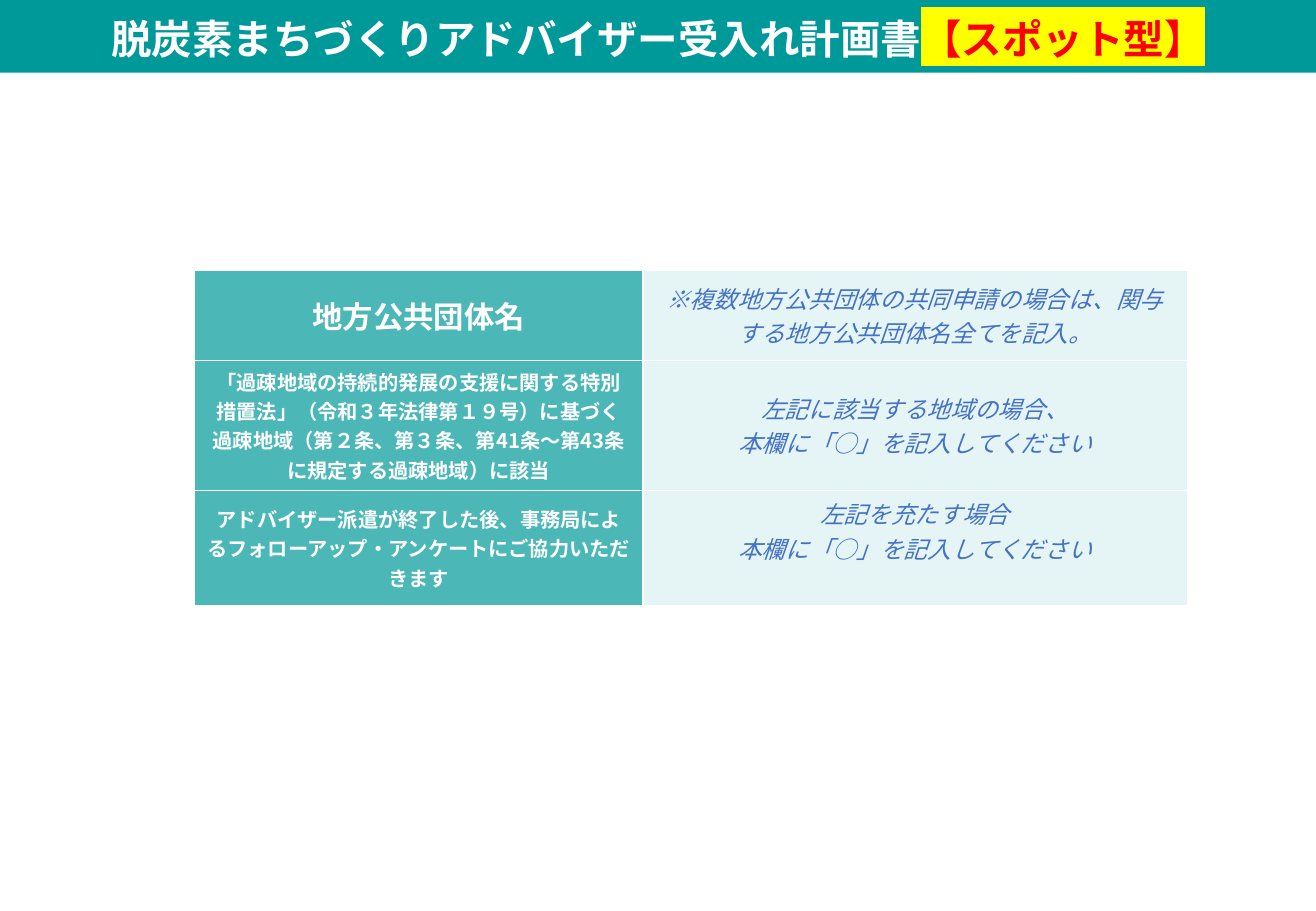
import pptx
import pptx.util
import pptx.dml.color
import pptx.enum.lang
import pptx.enum.shapes
import pptx.enum.text
import pptx.oxml
import pptx.oxml.ns
from lxml import etree

Cm = pptx.util.Cm
Pt = pptx.util.Pt
RGBColor = pptx.dml.color.RGBColor
qn = pptx.oxml.ns.qn

TEAL = RGBColor(0x00, 0x99, 0x99)
WHITE = RGBColor(0xFF, 0xFF, 0xFF)
RED = RGBColor(0xFF, 0x00, 0x00)
YELLOW = RGBColor(0xFF, 0xFF, 0x00)
BLUE = RGBColor(0x44, 0x72, 0xC4)
GOTHIC = "Noto Sans CJK JP"
LATIN = "Arial"

TITLE = [
    ("脱炭素まちづくりアドバイザー受入れ計画書", WHITE, None),
    ("【スポット型】", RED, YELLOW),
]
# heading, heading size (pt), entry lines, row height (cm), space below entry (cm)
ROWS = [
    ("地方公共団体名", 18,
     ["※複数地方公共団体の共同申請の場合は、関与する地方公共団体名全てを記入。"],
     1.89, 0.13),
    ("「過疎地域の持続的発展の支援に関する特別措置法」（令和３年法律第１９号）に基づく"
     "過疎地域（第２条、第３条、第41条～第43条に規定する過疎地域）に該当", 12,
     ["左記に該当する地域の場合、", "本欄に「○」を記入してください"],
     2.7, 0.13),
    ("アドバイザー派遣が終了した後、事務局によるフォローアップ・アンケートに"
     "ご協力いただきます", 12,
     ["左記を充たす場合", "本欄に「○」を記入してください"],
     2.4, 0.85),
]
COLUMN_WIDTHS = (9.37, 11.38)
SLIDE_WIDTH, SLIDE_HEIGHT = Cm(27.51), Cm(19.05)


def style_run(run, size, color, face=GOTHIC, bold=True, italic=False):
    font = run.font
    font.size, font.bold, font.italic = Pt(size), bold, italic
    font.color.rgb = color
    font.name = face
    font.language_id = pptx.enum.lang.MSO_LANGUAGE_ID.JAPANESE
    latin = run._r.rPr.find(qn("a:latin"))
    east_asian = etree.Element(qn("a:ea"), typeface=GOTHIC)
    latin.addnext(east_asian)


def highlight(run, color):
    mark = etree.Element(qn("a:highlight"))
    etree.SubElement(mark, qn("a:srgbClr"), val=str(color))
    run._r.rPr.find(qn("a:solidFill")).addnext(mark)


def tint_cell(cell, opacity):
    """Fill a cell with translucent teal and give it thin white borders."""
    cell.fill.solid()
    cell.fill.fore_color.rgb = TEAL
    properties = cell._tc.tcPr
    fill_color = properties.find(qn("a:solidFill")).find(qn("a:srgbClr"))
    etree.SubElement(fill_color, qn("a:alpha"), val=str(opacity * 1000))
    for position, side in enumerate(("lnL", "lnR", "lnT", "lnB")):
        border = etree.Element(qn("a:" + side), w=str(Pt(1)))
        line_fill = etree.SubElement(border, qn("a:solidFill"))
        etree.SubElement(line_fill, qn("a:srgbClr"), val=str(WHITE))
        properties.insert(position, border)


def fill_cell(cell, lines, opacity, **run_style):
    cell.vertical_anchor = pptx.enum.text.MSO_ANCHOR.MIDDLE
    cell.text_frame.text = "\n".join(lines)
    for paragraph in cell.text_frame.paragraphs:
        paragraph.alignment = pptx.enum.text.PP_ALIGN.CENTER
        for run in paragraph.runs:
            style_run(run, **run_style)
    tint_cell(cell, opacity)


def add_title(slide):
    banner = slide.shapes.add_shape(
        pptx.enum.shapes.MSO_SHAPE.RECTANGLE, 0, 0, SLIDE_WIDTH, Cm(1.52))
    banner.shadow.inherit = False
    banner.fill.solid()
    banner.fill.fore_color.rgb = TEAL
    banner.line.fill.background()
    frame = banner.text_frame
    frame.word_wrap = True
    frame.vertical_anchor = pptx.enum.text.MSO_ANCHOR.MIDDLE
    frame.margin_left = frame.margin_right = Cm(0.2)
    frame.margin_top, frame.margin_bottom = Cm(0.3), Cm(0.1)
    heading = frame.paragraphs[0]
    heading.alignment = pptx.enum.text.PP_ALIGN.CENTER
    heading.line_spacing = 0.9
    for words, color, marker in TITLE:
        run = heading.add_run()
        run.text = words
        style_run(run, 24, color)
        if marker:
            highlight(run, marker)


def add_form(slide):
    form = slide.shapes.add_table(
        len(ROWS), len(COLUMN_WIDTHS), Cm(4.07), Cm(5.65),
        Cm(sum(COLUMN_WIDTHS)), Cm(sum(row[3] for row in ROWS))).table
    form.first_row = form.horz_banding = False
    for column, width in zip(form.columns, COLUMN_WIDTHS):
        column.width = Cm(width)
    for index, (heading, size, entry, height, space_below) in enumerate(ROWS):
        form.rows[index].height = Cm(height)
        fill_cell(form.cell(index, 0), [heading], 70, size=size, color=WHITE)
        entry_cell = form.cell(index, 1)
        fill_cell(entry_cell, entry, 10, size=14, color=BLUE,
                  face=LATIN, bold=False, italic=True)
        entry_cell.margin_bottom = Cm(space_below)


def main():
    deck = pptx.Presentation()
    deck.slide_width, deck.slide_height = SLIDE_WIDTH, SLIDE_HEIGHT
    slide = deck.slides.add_slide(deck.slide_layouts[6])
    add_title(slide)
    add_form(slide)
    deck.save("out.pptx")


if __name__ == "__main__":
    main()
